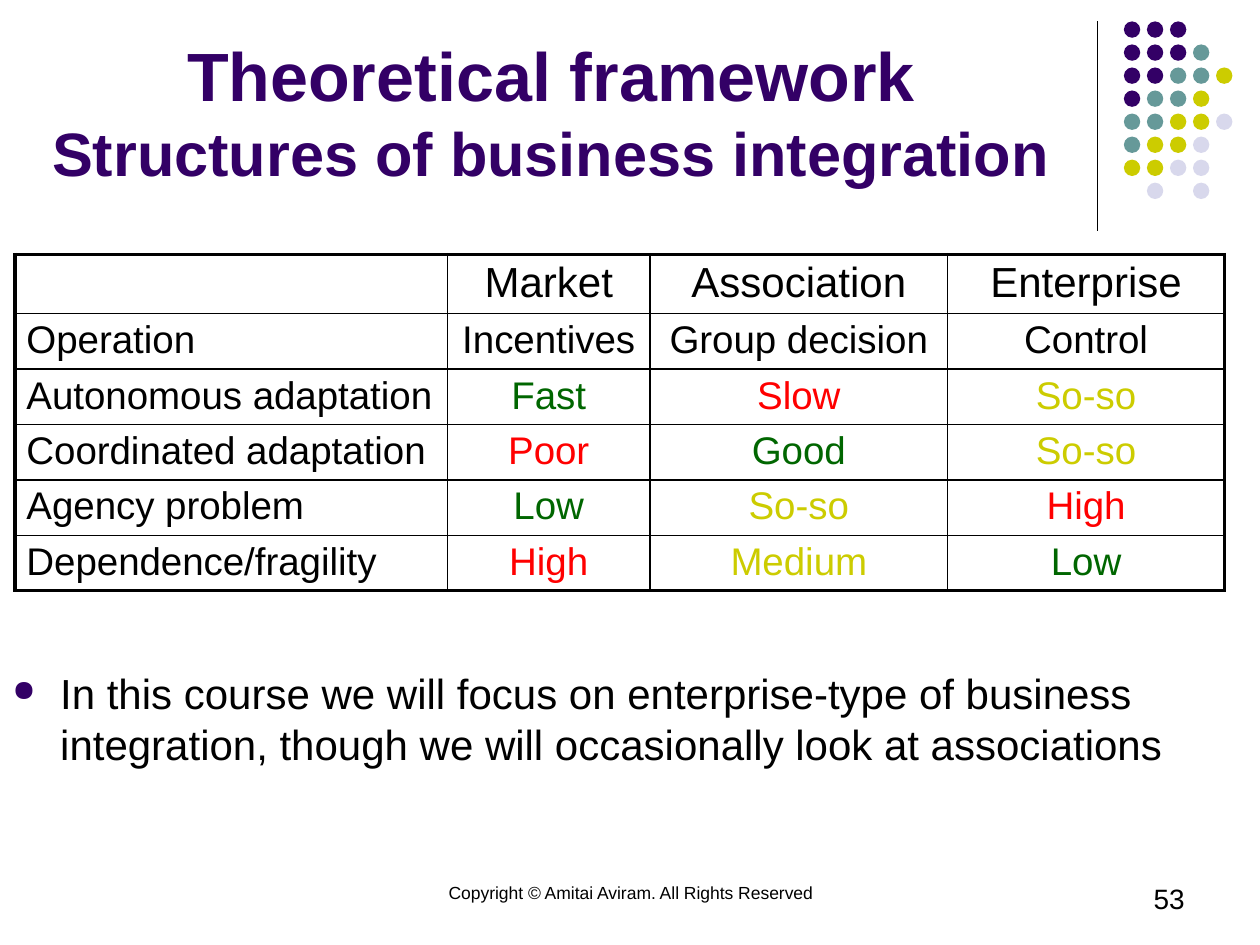
from lxml.etree import SubElement
from pptx import Presentation
from pptx.dml.color import RGBColor
from pptx.enum.shapes import MSO_CONNECTOR, MSO_SHAPE
from pptx.enum.text import MSO_ANCHOR, PP_ALIGN
from pptx.oxml.ns import qn
from pptx.util import Inches, Pt

BLACK = RGBColor(0x00, 0x00, 0x00)
PURPLE = RGBColor(0x33, 0x00, 0x66)
TEAL = RGBColor(0x66, 0x99, 0x99)
YELLOW = RGBColor(0xCC, 0xCC, 0x00)
LAVENDER = RGBColor(0xD8, 0xD8, 0xEC)
GREEN = RGBColor(0x00, 0x66, 0x00)
RED = RGBColor(0xFF, 0x00, 0x00)


def add_run(paragraph, text, size, color=BLACK, bold=False):
    run = paragraph.add_run()
    run.text = text
    run.font.name = "Arial"
    run.font.size = Pt(size)
    run.font.bold = bold
    run.font.color.rgb = color


def add_text_box(left, top, width, height, text, size, alignment):
    text_box = slide.shapes.add_textbox(
        Inches(left), Inches(top), Inches(width), Inches(height))
    text_box.text_frame.word_wrap = True
    paragraph = text_box.text_frame.paragraphs[0]
    paragraph.alignment = alignment
    add_run(paragraph, text, size)
    return paragraph


presentation = Presentation()
presentation.slide_width = Inches(10)
presentation.slide_height = Inches(7.5)
slide = presentation.slides.add_slide(presentation.slide_layouts[5])

# Divider and dot pattern in the top right corner
divider = slide.shapes.add_connector(
    MSO_CONNECTOR.STRAIGHT, Inches(8.71), Inches(0.17), Inches(8.71), Inches(1.83))
divider.line.color.rgb = BLACK
divider.line.width = Pt(0.75)
SubElement(divider._element.spPr, qn("a:effectLst"))

DOT_COLORS = {"P": PURPLE, "T": TEAL, "Y": YELLOW, "L": LAVENDER}
DOT_ROWS = ["PPP", "PPPT", "PPTTY", "PTTY", "TTYYL", "TYYL", "YYLL", " L L"]
dot_step = Inches(1.28) / 7
dot_group = slide.shapes.add_group_shape()
for row, letters in enumerate(DOT_ROWS):
    for column, letter in enumerate(letters):
        if letter == " ":
            continue
        dot = dot_group.shapes.add_shape(
            MSO_SHAPE.OVAL,
            round(Inches(8.92) + column * dot_step),
            round(Inches(0.17) + row * dot_step),
            Inches(0.13), Inches(0.13))
        dot.shadow.inherit = False
        dot.fill.solid()
        dot.fill.fore_color.rgb = DOT_COLORS[letter]
        dot.line.fill.background()

# Title
title = slide.shapes.title
title.left, title.top = Inches(0), Inches(0.13)
title.width, title.height = Inches(8.75), Inches(1.42)
title.text_frame.word_wrap = True
title.text_frame.vertical_anchor = MSO_ANCHOR.BOTTOM
title_paragraph = title.text_frame.paragraphs[0]
title_paragraph.alignment = PP_ALIGN.CENTER
add_run(title_paragraph, "Theoretical framework", 39, PURPLE, bold=True)
title_paragraph.add_line_break()
add_run(title_paragraph, "Structures of business integration", 35, PURPLE, bold=True)

# Comparison table
ROWS = [
    ["", "Market", "Association", "Enterprise"],
    ["Operation", "Incentives", "Group decision", "Control"],
    ["Autonomous adaptation", "Fast", "Slow", "So-so"],
    ["Coordinated adaptation", "Poor", "Good", "So-so"],
    ["Agency problem", "Low", "So-so", "High"],
    ["Dependence/fragility", "High", "Medium", "Low"],
]
RATING_COLORS = {
    "Fast": GREEN, "Good": GREEN, "Low": GREEN,
    "Slow": RED, "Poor": RED, "High": RED,
    "So-so": YELLOW, "Medium": YELLOW,
}
COLUMN_WIDTHS = [3.43, 1.61, 2.36, 2.2]
last_row, last_column = len(ROWS) - 1, len(COLUMN_WIDTHS) - 1

table = slide.shapes.add_table(
    len(ROWS), len(COLUMN_WIDTHS),
    Inches(0.12), Inches(2.02), Inches(9.6), Inches(2.67)).table
table.first_row = False
table.horz_banding = False
for column, width in enumerate(COLUMN_WIDTHS):
    table.columns[column].width = Inches(width)

for row, texts in enumerate(ROWS):
    table.rows[row].height = Inches(0.47 if row == 0 else 0.44)
    for column, text in enumerate(texts):
        cell = table.cell(row, column)
        cell.margin_left = cell.margin_right = Inches(0.09)
        cell.margin_top = cell.margin_bottom = Inches(0.04)
        paragraph = cell.text_frame.paragraphs[0]
        paragraph.alignment = PP_ALIGN.LEFT if column == 0 else PP_ALIGN.CENTER
        if text:
            add_run(paragraph, text, 24 if row == 0 else 22,
                    RATING_COLORS.get(text, BLACK))

        outer_edges = {
            "lnL": column == 0, "lnR": column == last_column,
            "lnT": row == 0, "lnB": row == last_row,
        }
        cell_properties = cell._tc.get_or_add_tcPr()
        for tag, is_outer in outer_edges.items():
            border = SubElement(cell_properties, qn(f"a:{tag}"),
                                w=str(Pt(2.25 if is_outer else 1)))
            border_fill = SubElement(border, qn("a:solidFill"))
            SubElement(border_fill, qn("a:srgbClr"), val=str(BLACK))
        cell.fill.background()

# Bullet below the table
bullet = add_text_box(
    0, 5.25, 10, 1.81,
    "In this course we will focus on enterprise-type of business integration, "
    "though we will occasionally look at associations",
    24, PP_ALIGN.LEFT)
bullet_properties = bullet._p.get_or_add_pPr()
bullet_properties.set("marL", str(Inches(0.38)))
bullet_properties.set("indent", str(-Inches(0.38)))
bullet_color = SubElement(bullet_properties, qn("a:buClr"))
SubElement(bullet_color, qn("a:srgbClr"), val=str(PURPLE))
SubElement(bullet_properties, qn("a:buSzPct"), val="70000")
SubElement(bullet_properties, qn("a:buChar"), char="●")

# Footer
add_text_box(3.42, 6.95, 3.17, 0.5,
             "Copyright © Amitai Aviram. All Rights Reserved", 10, PP_ALIGN.CENTER)
add_text_box(7.17, 6.95, 2.33, 0.5, "53", 16, PP_ALIGN.RIGHT)

presentation.save("out.pptx")
